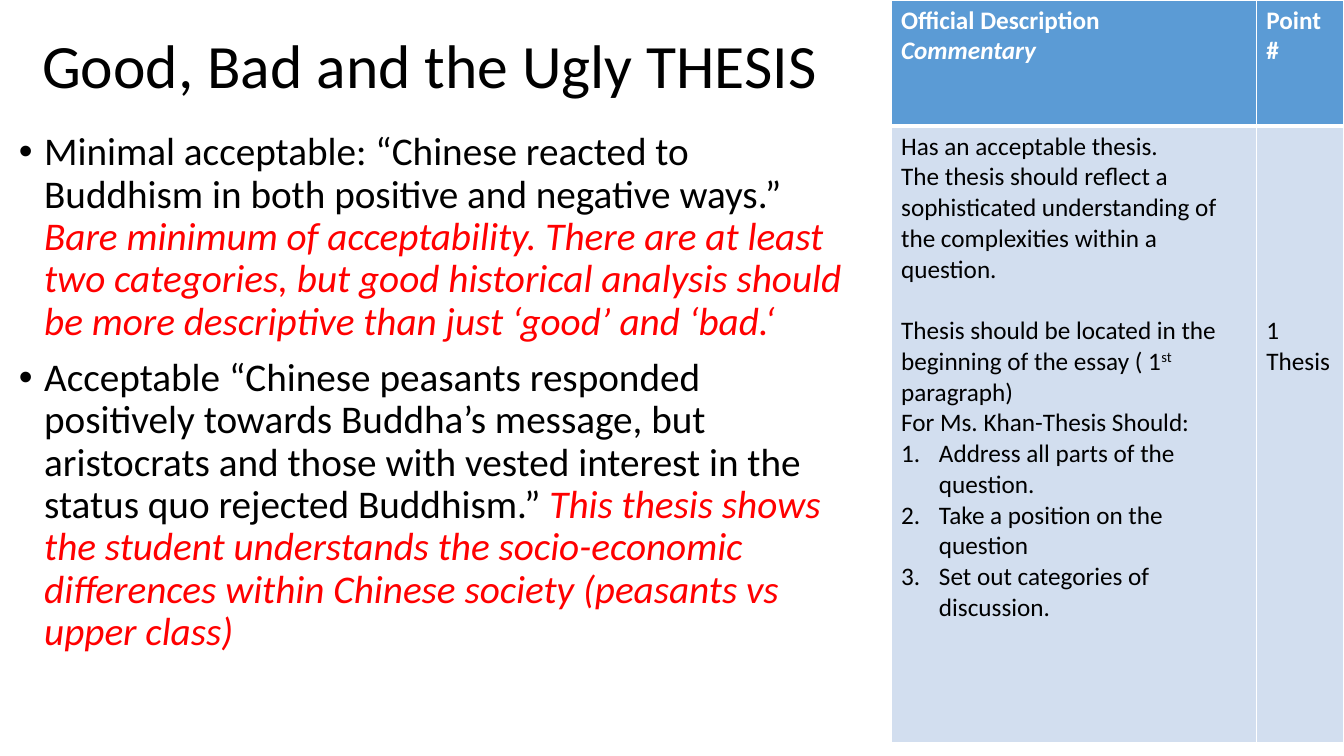
import pptx
import pptx.util
import pptx.dml.color
import pptx.enum.text
import pptx.oxml
import pptx.oxml.ns

Pt = pptx.util.Pt
DARK = {"color": "000000"}
RED = {"color": "FF0000", "italic": True}
HEAD = {"color": "FFFFFF", "bold": True}
ITEM = {"space_before": Pt(10), "line_spacing": 0.9}


def paint(hue):
    """Turn a hex string into a colour."""
    return pptx.dml.color.RGBColor.from_string(hue)


def apply(item, looks):
    """Set each attribute named in a dict."""
    for name, value in looks.items():
        setattr(item, name, value)


def node(tag, **attrs):
    """Make a drawing element with attributes."""
    made = pptx.oxml.parse_xml(f'<a:{tag} {pptx.oxml.ns.nsdecls("a")}/>')
    for name, value in attrs.items():
        made.set(name, str(value))
    return made


def mark(para, indent, *nodes):
    """Give a paragraph a hanging bullet or number."""
    props = para._p.get_or_add_pPr()
    props.set("marL", str(Pt(indent)))
    props.set("indent", str(-Pt(indent)))
    for part in nodes:
        props.append(part)


def write(frame, paras, size):
    """Fill a text frame with (layout, runs) pairs and return its paragraphs."""
    for index, (layout, runs) in enumerate(paras):
        para = frame.add_paragraph() if index else frame.paragraphs[0]
        apply(para, layout)
        for text, looks in runs:
            run = para.add_run()
            run.text = text
            looks = dict(looks)
            run.font.color.rgb = paint(looks.pop("color"))
            raised = looks.pop("raised", None)
            apply(run.font, {"name": "Calibri", "size": Pt(size), **looks})
            if raised:
                run._r.get_or_add_rPr().set("baseline", str(raised))
    return frame.paragraphs


def add_box(slide, box, paras, size, anchor):
    """Add a wrapping text box and return its paragraphs."""
    frame = slide.shapes.add_textbox(*map(Pt, box)).text_frame
    apply(frame, {"word_wrap": True, "vertical_anchor": anchor})
    return write(frame, paras, size)


def add_title(slide, box):
    """Place the slide title."""
    paras = [({"line_spacing": 0.9}, [("Good, Bad and the Ugly THESIS", DARK)])]
    add_box(slide, box, paras, 44, pptx.enum.text.MSO_ANCHOR.MIDDLE)


def add_body(slide, box):
    """Place the sample theses with their red remarks."""
    pairs = [
        ("Minimal acceptable: “Chinese reacted to Buddhism in both positive and "
         "negative ways.” ",
         "Bare minimum of acceptability. There are at least two categories, but good "
         "historical analysis should be more descriptive than just ‘good’ and ‘bad.‘"),
        ("Acceptable “Chinese peasants responded positively towards Buddha’s message, "
         "but aristocrats and those with vested interest in the status quo rejected "
         "Buddhism.” ",
         "This thesis shows the student understands the socio-economic differences "
         "within Chinese society (peasants vs upper class)"),
    ]
    paras = [(ITEM, [(claim, DARK), (remark, RED)]) for claim, remark in pairs]
    for para in add_box(slide, box, paras, 28, pptx.enum.text.MSO_ANCHOR.TOP):
        mark(para, 18, node("buFont", typeface="Arial"), node("buChar", char="•"))


def add_edge(cell, widths):
    """Draw white borders round a cell."""
    props = cell._tc.get_or_add_tcPr()
    for index, (side, width) in enumerate(widths.items()):
        line = node("ln" + side, w=Pt(width))
        fill = node("solidFill")
        fill.append(node("srgbClr", val="FFFFFF"))
        line.append(fill)
        props.insert(index, line)


def add_rubric(slide, box):
    """Place the scoring table."""
    left, top, width, height = box
    table = slide.shapes.add_table(2, 2, *map(Pt, box)).table
    point, header = 62.6, 90
    for column, size in zip(table.columns, (width - point, point)):
        column.width = Pt(size)
    for row, size in zip(table.rows, (header, height - header)):
        row.height = Pt(size)
    rules = ["Address all parts of the question.", "Take a position on the question",
             "Set out categories of discussion."]
    detail = [
        ({}, [("Has an acceptable thesis.", DARK)]),
        ({}, [("The thesis should reflect a sophisticated understanding of the "
               "complexities within a question.", DARK)]),
        ({"space_before": Pt(22)},
         [("Thesis should be located in the beginning of the essay ( 1", DARK),
          ("st", {**DARK, "raised": 30000}), (" paragraph)", DARK)]),
        ({}, [("For Ms. Khan-Thesis Should:", DARK)]),
    ] + [({}, [(rule, DARK)]) for rule in rules]
    cells = [
        [[({}, [("Official Description", HEAD)]),
          ({}, [("Commentary", {**HEAD, "italic": True})])],
         [({}, [("Point #", HEAD)])]],
        [detail, [({}, [("1", DARK)]), ({}, [("Thesis", DARK)])]],
    ]
    fills = ["5B9BD5", "D2DEEF"]
    edges = [{"L": 1, "R": 1, "T": 1, "B": 3}, {"L": 1, "R": 1, "T": 3, "B": 1}]
    for row, line in enumerate(cells):
        for col, paras in enumerate(line):
            cell = table.cell(row, col)
            cell.fill.solid()
            cell.fill.fore_color.rgb = paint(fills[row])
            add_edge(cell, edges[row])
            write(cell.text_frame, paras, 18)
    for para in table.cell(1, 0).text_frame.paragraphs[-len(rules):]:
        mark(para, 27, node("buFont", typeface="+mj-lt"),
             node("buAutoNum", type="arabicPeriod"))
    table.cell(1, 1).margin_top = Pt(135.4)


def main():
    """Build and save the slide."""
    deck = pptx.Presentation()
    apply(deck, {"slide_width": Pt(960), "slide_height": Pt(540)})
    slide = deck.slides.add_slide(deck.slide_layouts[6])
    add_title(slide, (23, 13, 872, 71.3))
    add_body(slide, (6.5, 90.7, 612, 395.3))
    add_rubric(slide, (636.5, 0, 323.5, 530.6))
    deck.save("out.pptx")


if __name__ == "__main__":
    main()
